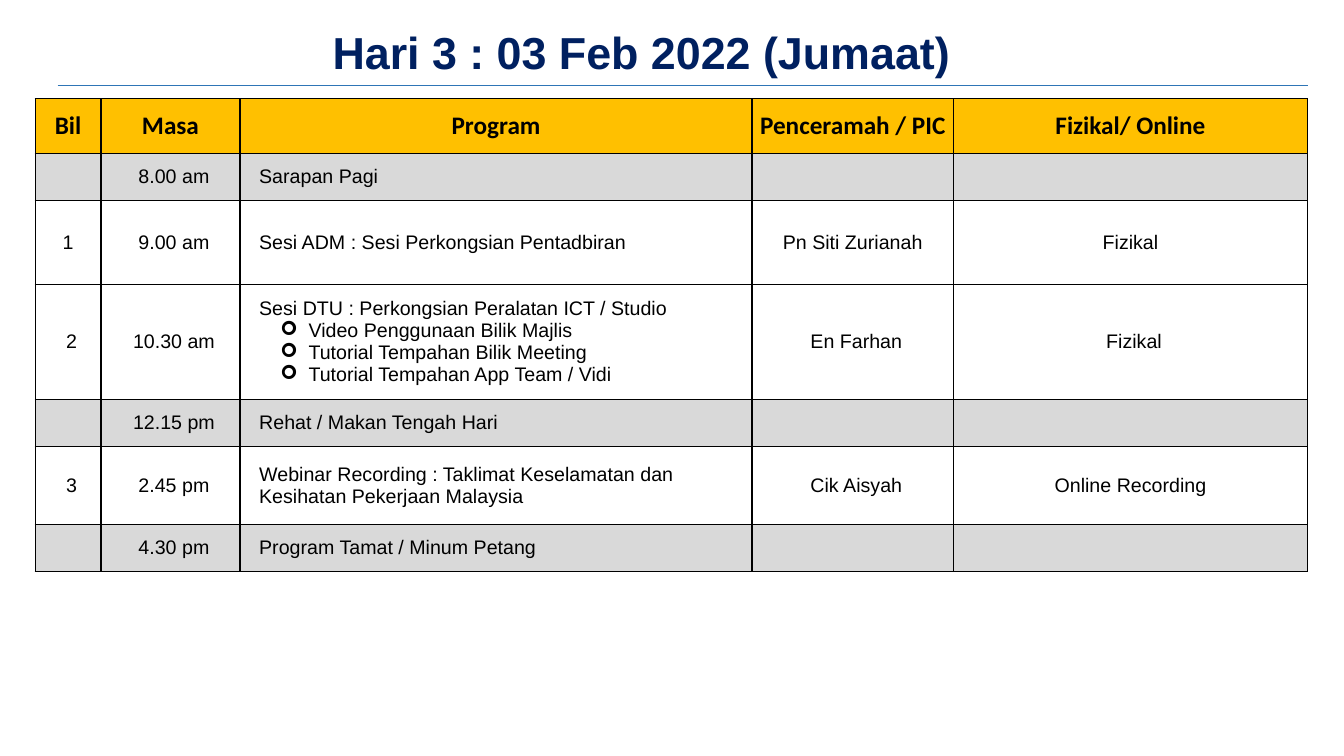
from lxml import etree
from pptx import Presentation
from pptx.dml.color import RGBColor
from pptx.enum.shapes import MSO_CONNECTOR
from pptx.enum.text import MSO_ANCHOR, MSO_AUTO_SIZE, PP_ALIGN
from pptx.oxml.ns import qn
from pptx.util import Inches, Pt

CENTER, LEFT = PP_ALIGN.CENTER, PP_ALIGN.LEFT
MIDDLE = MSO_ANCHOR.MIDDLE
STRAIGHT = MSO_CONNECTOR.STRAIGHT
NO_AUTOFIT = MSO_AUTO_SIZE.NONE

COLORS = {
    "title": "002060", "rule": "2E75B6", "text": "000000", "border": "000000",
    "header": "FFC000", "break": "D9D9D9", "session": "FFFFFF",
}

HEADERS = ["Bil", "Masa", "Program", "Penceramah / PIC", "Fizikal/ Online"]
# Each program is a list: the heading first, then its bullet points
SCHEDULE = [
    ["", "8.00 am", ["Sarapan Pagi"], "", ""],
    ["1", "9.00 am", ["Sesi ADM : Sesi Perkongsian Pentadbiran"], "Pn Siti Zurianah", "Fizikal"],
    ["2", "10.30 am", ["Sesi DTU : Perkongsian Peralatan ICT / Studio",
                       "Video Penggunaan Bilik Majlis",
                       "Tutorial Tempahan Bilik Meeting",
                       "Tutorial Tempahan App Team / Vidi"], "En Farhan", "Fizikal"],
    ["", "12.15 pm", ["Rehat / Makan Tengah Hari"], "", ""],
    ["3", "2.45 pm", ["Webinar Recording : Taklimat Keselamatan dan Kesihatan Pekerjaan Malaysia"],
     "Cik Aisyah", "Online Recording"],
    ["", "4.30 pm", ["Program Tamat / Minum Petang"], "", ""],
]
# Centred cells (row, column) without the small left indent
FLUSH_CELLS = {(2, 0), (2, 3), (2, 4), (5, 4)}

# Percent of slide width and height
COLUMN_WIDTHS = [4.88, 10.35, 38.1, 15, 26.33]
ROW_HEIGHTS = [7.2, 6.27, 11.07, 15.2, 6.27, 10.27, 6.27]


class ScheduleSlide:
    """Places styled elements, with lengths in percent of the slide."""

    def __init__(self, deck):
        self.deck = deck
        self.slide = deck.slides.add_slide(deck.slide_layouts[5])

    def x(self, share):
        return round(self.deck.slide_width * share / 100)

    def y(self, share):
        return round(self.deck.slide_height * share / 100)

    def color(self, name):
        return RGBColor.from_string(COLORS[name])

    def add_text(self, paragraph, text, size, font="Arial", color="text", bold=False, align=CENTER):
        paragraph.alignment = align
        run = paragraph.add_run()
        run.text = text
        run.font.size, run.font.name, run.font.bold = Pt(size), font, bold
        run.font.color.rgb = self.color(color)

    def indent(self, paragraph, left, first=0, bullet=None):
        properties = paragraph._p.get_or_add_pPr()
        properties.set("marL", str(Inches(left)))
        properties.set("indent", str(Inches(first)))
        if bullet:
            etree.SubElement(properties, qn("a:buFont"), typeface="Wingdings")
            etree.SubElement(properties, qn("a:buChar"), char=bullet)

    def title(self, text, left, top, width, height):
        heading = self.slide.shapes.title
        heading.left, heading.top = self.x(left), self.y(top)
        heading.width, heading.height = self.x(width), self.y(height)
        frame = heading.text_frame
        frame.auto_size, frame.word_wrap = NO_AUTOFIT, True
        frame.vertical_anchor = MIDDLE
        self.add_text(frame.paragraphs[0], text, 32, color="title", bold=True)

    def rule(self, left, right, top):
        line = self.slide.shapes.add_connector(
            STRAIGHT, self.x(left), self.y(top), self.x(right), self.y(top))
        line.line.color.rgb = self.color("rule")
        line.line.width = Pt(0.5)
        etree.SubElement(line._element.spPr, qn("a:effectLst"))

    def style_cell(self, cell, fill, side_margin):
        cell.vertical_anchor = MIDDLE
        cell.margin_left = cell.margin_right = Inches(side_margin)
        cell.margin_top = cell.margin_bottom = 0
        properties = cell._tc.get_or_add_tcPr()
        for side in ("lnL", "lnR", "lnT", "lnB"):
            border = etree.SubElement(properties, qn(f"a:{side}"), w=str(Pt(1)))
            solid = etree.SubElement(border, qn("a:solidFill"))
            etree.SubElement(solid, qn("a:srgbClr"), val=COLORS["border"])
        cell.fill.solid()
        cell.fill.fore_color.rgb = self.color(fill)

    def program(self, frame, lines):
        for number, line in enumerate(lines):
            paragraph = frame.add_paragraph() if number else frame.paragraphs[0]
            self.add_text(paragraph, line, 14, align=LEFT)
            if number:
                self.indent(paragraph, 0.68, -0.28, "➢")
            else:
                self.indent(paragraph, 0.19)

    def timetable(self, left, top):
        table = self.slide.shapes.add_table(
            len(ROW_HEIGHTS), len(COLUMN_WIDTHS), self.x(left), self.y(top),
            self.x(sum(COLUMN_WIDTHS)), self.y(sum(ROW_HEIGHTS))).table
        table.first_row = table.horz_banding = False
        for column, width in zip(table.columns, COLUMN_WIDTHS):
            column.width = self.x(width)
        for row, height in zip(table.rows, ROW_HEIGHTS):
            row.height = self.y(height)

        # Header row
        for col, label in enumerate(HEADERS):
            cell = table.cell(0, col)
            self.style_cell(cell, "header", 0.07)
            self.add_text(cell.text_frame.paragraphs[0], label, 18, "Calibri", bold=True)

        # Sessions are numbered; breaks have no number and are shaded
        for row, entry in enumerate(SCHEDULE, 1):
            fill = "session" if entry[0] else "break"
            for col, content in enumerate(entry):
                cell = table.cell(row, col)
                self.style_cell(cell, fill, 0)
                paragraph = cell.text_frame.paragraphs[0]
                if isinstance(content, list):
                    self.program(cell.text_frame, content)
                elif content:
                    self.add_text(paragraph, content, 14)
                    self.indent(paragraph, 0 if (row, col) in FLUSH_CELLS else 0.07)


def main():
    deck = Presentation()
    deck.slide_width, deck.slide_height = Inches(13.33), Inches(7.5)
    day = ScheduleSlide(deck)
    day.rule(4.28, 97.3, 11.33)
    day.title("Hari 3 : 03 Feb 2022 (Jumaat)", 14.25, 3.2, 67, 7.2)
    day.timetable(2.63, 13.07)
    deck.save("out.pptx")


if __name__ == "__main__":
    main()
